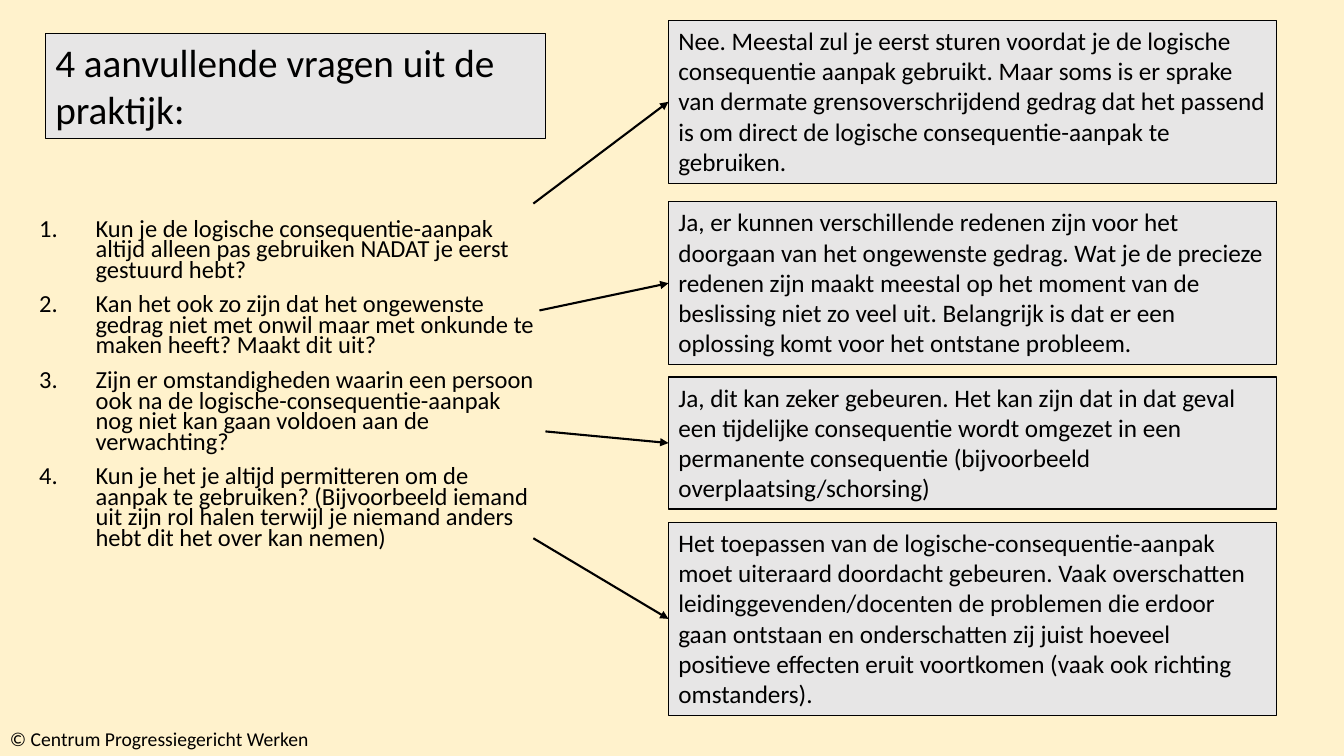
"""Build a slide that links four practical questions to their answers."""
from pptx import Presentation
from pptx.dml.color import RGBColor as RGB
from pptx.enum.shapes import MSO_CONNECTOR as Link, MSO_SHAPE as Shape
from pptx.enum.text import MSO_ANCHOR as Anchor, PP_ALIGN as Align
from pptx.oxml.ns import qn
from pptx.util import Inches, Pt
from lxml.etree import SubElement as Sub

TITLE = "4 aanvullende vragen uit de praktijk:"
CREDIT = "© Centrum Progressiegericht Werken"
ASKS = [
    "Kun je de logische consequentie-aanpak altijd alleen pas gebruiken NADAT je eerst gestuurd hebt?",
    "Kan het ook zo zijn dat het ongewenste gedrag niet met onwil maar met onkunde te maken heeft? Maakt dit uit?",
    "Zijn er omstandigheden waarin een persoon ook na de logische-consequentie-aanpak nog niet kan gaan voldoen aan de verwachting?",
    "Kun je het je altijd permitteren om de aanpak te gebruiken? (Bijvoorbeeld iemand uit zijn rol halen terwijl je niemand anders hebt dit het over kan nemen)",
]
REPLIES = [
    (0.2, 1.62, (5.29, 2.02), "Nee. Meestal zul je eerst sturen voordat je de logische consequentie aanpak gebruikt. Maar soms is er sprake van dermate grensoverschrijdend gedrag dat het passend is om direct de logische consequentie-aanpak te gebruiken."),
    (2, 1.62, (5.35, 3.08), "Ja, er kunnen verschillende redenen zijn voor het doorgaan van het ongewenste gedrag. Wat je de precieze redenen zijn maakt meestal op het moment van de beslissing niet zo veel uit. Belangrijk is dat er een oplossing komt voor het ontstane probleem."),
    (3.74, 1.31, (5.41, 4.28), "Ja, dit kan zeker gebeuren. Het kan zijn dat in dat geval een tijdelijke consequentie wordt omgezet in een permanente consequentie (bijvoorbeeld overplaatsing/schorsing)"),
    (5.18, 1.92, (5.29, 5.34), "Het toepassen van de logische-consequentie-aanpak moet uiteraard doordacht gebeuren. Vaak overschatten leidinggevenden/docenten de problemen die erdoor gaan ontstaan en onderschatten zij juist hoeveel positieve effecten eruit voortkomen (vaak ook richting omstanders)."),
]
THEME = {
    "font": "Calibri", "ink": RGB.from_string("000000"),
    "back": RGB.from_string("FFF2CC"), "panel": RGB.from_string("E7E6E6"),
    "title": 28, "reply": 18, "ask": 17.5, "credit": 14,
    "edge": 0.75, "arrow": 1.5,
}


def style(item, **vals):
    for key, val in vals.items():
        setattr(item, key, val)


def paint(fill, color):
    fill.solid()
    fill.fore_color.rgb = color


def write(shape, lines, size, listed=False):
    frame = shape.text_frame
    style(frame, word_wrap=True, vertical_anchor=Anchor.TOP)
    for num, line in enumerate(lines):
        para = frame.add_paragraph() if num else frame.paragraphs[0]
        para.alignment = Align.LEFT
        if listed:
            style(para, line_spacing=0.7, space_before=Pt(10 if num else 0))
            props = para._p.get_or_add_pPr()
            props.set("marL", str(Inches(0.56)))
            props.set("indent", str(-Inches(0.56)))
            Sub(props, qn("a:buFont"), typeface="+mj-lt")
            Sub(props, qn("a:buAutoNum"), type="arabicPeriod")
        run = para.add_run()
        run.text = line
        style(run.font, name=THEME["font"], size=Pt(size))
        run.font.color.rgb = THEME["ink"]


def label(slide, area, lines, size, listed=False):
    write(slide.shapes.add_textbox(*map(Inches, area)), lines, size, listed)


def panel(slide, area, text, size):
    box = slide.shapes.add_shape(Shape.RECTANGLE, *map(Inches, area))
    box.shadow.inherit = False
    paint(box.fill, THEME["panel"])
    paint(box.line.fill, THEME["ink"])
    box.line.width = Pt(THEME["edge"])
    write(box, [text], size)
    return box


def arrow(slide, start, box):
    x, y = map(Inches, start)
    line = slide.shapes.add_connector(Link.STRAIGHT, x, y, box.left, box.top)
    line.end_connect(box, 1)
    paint(line.line.fill, THEME["ink"])
    line.line.width = Pt(THEME["arrow"])
    Sub(line.line._get_or_add_ln(), qn("a:tailEnd"), type="triangle")
    Sub(line._element.spPr, qn("a:effectLst"))


def main():
    deck = Presentation()
    style(deck, slide_width=Inches(13.33), slide_height=Inches(7.5))
    slide = deck.slides.add_slide(deck.slide_layouts[6])
    paint(slide.background.fill, THEME["back"])
    label(slide, (0.29, 2.14, 5.12, 3.91), ASKS, THEME["ask"], True)
    panel(slide, (0.45, 0.33, 4.96, 1.04), TITLE, THEME["title"])
    for top, high, start, text in REPLIES:
        box = panel(slide, (6.63, top, 6.03, high), text, THEME["reply"])
        arrow(slide, start, box)
    label(slide, (0, 7.16, 3.87, 0.34), [CREDIT], THEME["credit"])
    deck.save("out.pptx")


if __name__ == "__main__":
    main()
